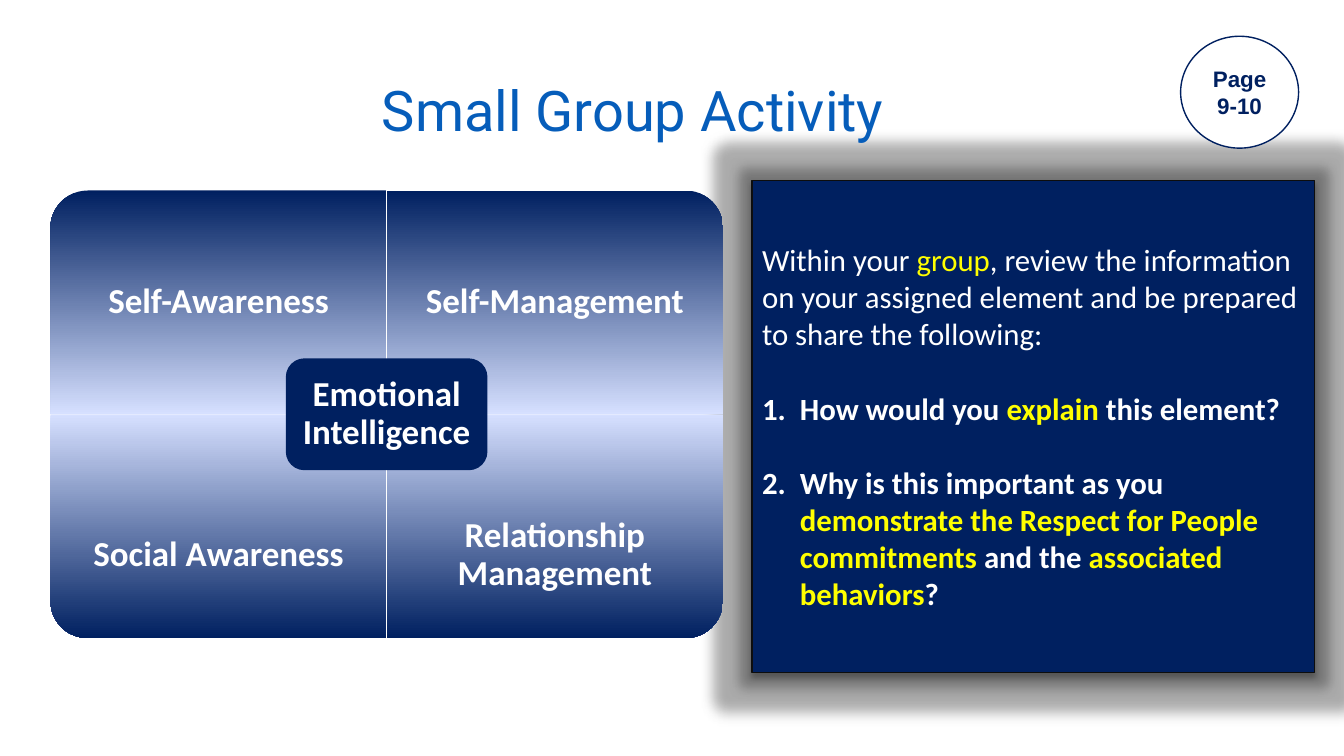
from lxml import etree
from pptx import Presentation
from pptx.dml.color import RGBColor
from pptx.enum.shapes import MSO_SHAPE
from pptx.enum.text import MSO_ANCHOR, PP_ALIGN
from pptx.oxml import parse_xml
from pptx.oxml.ns import nsdecls, qn
from pptx.util import Inches, Pt

# Content
NAVY, PALE, WHITE, YELLOW, BLUE = "002060", "D6E0FF", "FFFFFF", "FFFF00", "065DBA"
TITLE = "Small Group Activity"
PAGE = "Page 9-10"
CENTRE = "Emotional Intelligence"
# label, column, row, rotation, label top
QUADRANTS = [
    ("Self-Awareness", 0, 0, 270, 2.16),
    ("Self-Management", 1, 0, 0, 2.16),
    ("Social Awareness", 0, 1, 180, 4.67),
    ("Relationship Management", 1, 1, 90, 4.67),
]
INTRO = [("Within your ", WHITE), ("group", YELLOW),
         (", review the information on your assigned element and be "
          "prepared to share the following:", WHITE)]
QUESTIONS = [
    [("How would you ", WHITE), ("explain", YELLOW), (" this element?", WHITE)],
    [("Why is this important as you ", WHITE),
     ("demonstrate the Respect for People commitments ", YELLOW),
     ("and the ", WHITE), ("associated behaviors", YELLOW), ("?", WHITE)],
]

# Layout in inches
LEFT, TOP, QUAD_W, QUAD_H = 0.5, 1.89, 3.335, 2.22
LABEL_H = 1.67


def color(hex_text):
    return RGBColor.from_string(hex_text)


def add_box(kind, x, y, w, h, fill=None, line=None):
    sp = s.shapes.add_shape(kind, Inches(x), Inches(y), Inches(w), Inches(h))
    sp.shadow.inherit = False
    if fill:
        sp.fill.solid()
        sp.fill.fore_color.rgb = color(fill)
    if line:
        sp.line.color.rgb = color(line)
        sp.line.width = Pt(1)
    else:
        sp.line.fill.background()
    return sp


def add_textbox(x, y, w, h):
    return s.shapes.add_textbox(Inches(x), Inches(y), Inches(w), Inches(h))


def write(sp, paragraph, *, size, font="Calibri", bold=False, fill=WHITE,
          align=PP_ALIGN.CENTER, spacing=None, before=None, inset=None,
          numbered=False, append=False):
    """Write a string, or a list of (text, colour) runs, as one paragraph."""
    tf = sp.text_frame
    tf.word_wrap = True
    tf.vertical_anchor = MSO_ANCHOR.MIDDLE
    if inset is not None:
        tf.margin_left = tf.margin_right = Inches(inset)
        tf.margin_top = tf.margin_bottom = Inches(inset)
    p = tf.add_paragraph() if append else tf.paragraphs[0]
    p.alignment = align
    if spacing:
        p.line_spacing = spacing
    if before:
        p.space_before = Pt(before)
    if numbered:
        pPr = p._p.get_or_add_pPr()
        pPr.set("marL", str(Inches(0.375)))
        pPr.set("indent", str(-Inches(0.375)))
        etree.SubElement(pPr, qn("a:buFont")).set("typeface", "+mj-lt")
        etree.SubElement(pPr, qn("a:buAutoNum")).set("type", "arabicPeriod")
    runs = [(paragraph, fill)] if isinstance(paragraph, str) else paragraph
    for words, run_color in runs:
        r = p.add_run()
        r.text = words
        r.font.name, r.font.size, r.font.bold = font, Pt(size), bold
        r.font.color.rgb = color(run_color)


prs = Presentation()
prs.slide_width, prs.slide_height = Inches(13.33), Inches(7.5)
s = prs.slides.add_slide(prs.slide_layouts[6])

# Instruction panel with glow and shadow
panel = add_box(MSO_SHAPE.RECTANGLE, 7.46, 1.79, 5.58, 4.88, NAVY, "0D0D0D")
effects = panel._element.spPr.find(qn("a:effectLst"))
effects.append(parse_xml(
    f'<a:glow {nsdecls("a")} rad="{Pt(18)}"><a:srgbClr val="000000">'
    '<a:alpha val="25000"/></a:srgbClr></a:glow>'))
effects.append(parse_xml(
    f'<a:outerShdw {nsdecls("a")} blurRad="{Pt(4)}" dist="{Pt(3)}" dir="5400000" '
    'rotWithShape="0"><a:srgbClr val="000000"><a:alpha val="40000"/>'
    '</a:srgbClr></a:outerShdw>'))
write(panel, INTRO, size=22, align=PP_ALIGN.LEFT)
for question in QUESTIONS:
    write(panel, question, size=22, bold=True, align=PP_ALIGN.LEFT,
          before=26.8, numbered=True, append=True)

# Four quadrants, each with its rounded corner turned outward
for label, col, row, turn, label_top in QUADRANTS:
    x, y = LEFT + col * QUAD_W, TOP + row * QUAD_H
    w, h = (QUAD_H, QUAD_W) if turn % 180 else (QUAD_W, QUAD_H)
    quad = add_box(MSO_SHAPE.ROUND_1_RECTANGLE, x + (QUAD_W - w) / 2,
                   y + (QUAD_H - h) / 2, w, h)
    quad.rotation = turn
    quad.fill.gradient()
    quad.fill.gradient_angle = 270
    shades = (PALE, NAVY) if row else (NAVY, PALE)
    for stop, shade in zip(quad.fill.gradient_stops, shades):
        stop.color.rgb = color(shade)
    quad._element.spPr.find(qn("a:gradFill")).set("rotWithShape", "0")
    write(add_textbox(x, label_top, QUAD_W, LABEL_H), label, size=25,
          bold=True, spacing=0.9, inset=0.19)

# Centre of the matrix
centre = add_box(MSO_SHAPE.ROUNDED_RECTANGLE, LEFT + QUAD_W - 1,
                 TOP + QUAD_H - 0.555, 2, 1.11, NAVY)
write(centre, CENTRE, size=25, bold=True, spacing=0.9, inset=0.1)

# Page reference and title
badge = add_box(MSO_SHAPE.OVAL, 11.71, 0.36, 1.17, 1.11, WHITE, NAVY)
write(badge, PAGE, size=16, font="Arial", bold=True, fill=NAVY)
write(add_textbox(3.69, 0.46, 8.2, 1.33), TITLE, size=40, font="Roboto",
      fill=BLUE, align=PP_ALIGN.LEFT, spacing=0.9)

prs.save("out.pptx")
